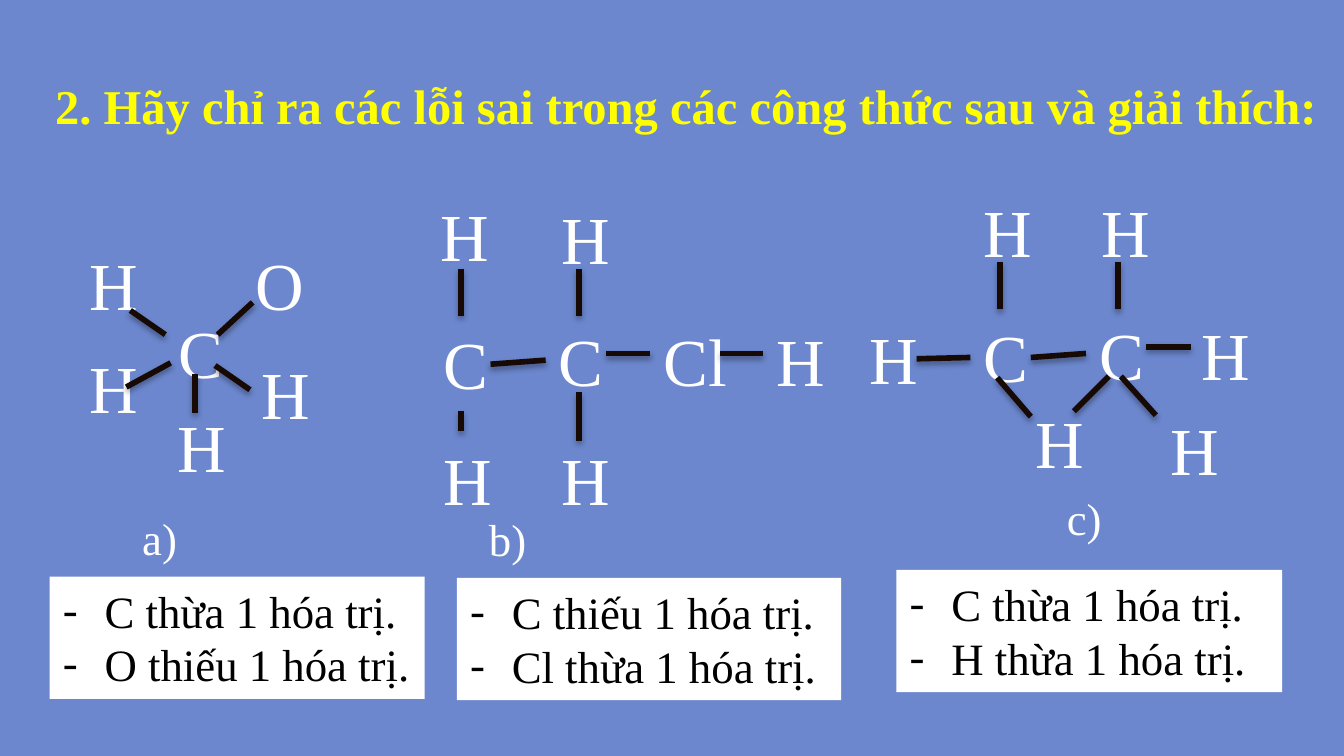
from lxml.etree import SubElement
from pptx import Presentation
from pptx.dml.color import RGBColor
from pptx.enum.shapes import MSO_CONNECTOR, MSO_SHAPE
from pptx.enum.text import MSO_ANCHOR, MSO_AUTO_SIZE, PP_ALIGN
from pptx.oxml.ns import qn
from pptx.util import Inches, Pt

BLUE = RGBColor(0x6C, 0x87, 0xCE)
YELLOW = RGBColor(0xFF, 0xFF, 0x00)
WHITE = RGBColor(0xFF, 0xFF, 0xFF)
BLACK = RGBColor(0x00, 0x00, 0x00)
BOND_COLOR = RGBColor(0x17, 0x0A, 0x05)
FONT = "Times New Roman"

TITLE = "2. Hãy chỉ ra các lỗi sai trong các công thức sau và giải thích:"
ATOM_SIZE = (0.46, 0.71)
CHLORINE_SIZE = (0.76, 0.71)

MOLECULES = [
    {
        "atoms": [("C", 1.23, 2.27), ("H", 1.22, 2.97), ("H", 0.57, 2.53),
                  ("H", 0.57, 1.76), ("O", 1.8, 1.76), ("H", 1.85, 2.57)],
        "bonds": [(0.97, 2.31, 1.23, 2.49), (1.6, 2.72, 1.86, 2.9),
                  (1.62, 2.49, 1.88, 2.25), (0.94, 2.88, 1.27, 2.7),
                  (1.45, 3.07, 1.45, 2.78)],
        "label": ("a)", 0.96, 3.75, 1.27),
        "box": (0.37, 4.29, 2.79),
        "errors": ["C thừa 1 hóa trị.", "O thiếu 1 hóa trị."],
    },
    {
        "atoms": [("C", 3.2, 2.35), ("H", 3.2, 3.21), ("H", 3.18, 1.4),
                  ("C", 4.06, 2.33), ("H", 4.08, 3.21), ("H", 4.08, 1.42),
                  ("Cl", 4.84, 2.33), ("H", 5.68, 2.33)],
        "bonds": [(3.43, 2.35, 3.43, 2), (3.65, 2.71, 4.06, 2.68),
                  (3.43, 3.21, 3.43, 3.06), (4.51, 2.63, 4.84, 2.63),
                  (4.31, 2.35, 4.31, 2), (4.31, 3.28, 4.31, 2.92),
                  (5.36, 2.63, 5.68, 2.63)],
        "label": ("b)", 3.54, 3.76, 1.27),
        "box": (3.4, 4.3, 2.86),
        "errors": ["C thiếu 1 hóa trị.", "Cl thừa 1 hóa trị."],
    },
    {
        "atoms": [("C", 7.22, 2.3), ("H", 7.61, 2.94), ("H", 6.37, 2.31),
                  ("H", 7.22, 1.37), ("C", 8.08, 2.28), ("H", 8.61, 2.99),
                  ("H", 8.1, 1.37), ("H", 8.84, 2.28)],
        "bonds": [(7.44, 2.3, 7.44, 1.95), (7.67, 2.66, 8.08, 2.63),
                  (7.67, 3.1, 7.42, 2.81), (6.82, 2.67, 7.22, 2.66),
                  (8.53, 2.58, 8.86, 2.58), (8.32, 2.3, 8.32, 1.95),
                  (7.99, 3.06, 8.25, 2.8), (8.6, 3.09, 8.34, 2.8)],
        "label": ("c)", 7.84, 3.6, 1.56),
        "box": (6.67, 4.24, 2.87),
        "errors": ["C thừa 1 hóa trị.", "H thừa 1 hóa trị."],
    },
]


def style(paragraph, size, color, bold=False):
    paragraph.alignment = PP_ALIGN.LEFT
    font = paragraph.font
    font.name, font.size, font.bold = FONT, Pt(size), bold
    font.color.rgb = color


def add_title(slide):
    title = slide.shapes.title
    title.left, title.top = Inches(0.31), Inches(0.44)
    title.width, title.height = Inches(9.69), Inches(0.68)
    frame = title.text_frame
    frame.text = TITLE
    frame.word_wrap = True
    frame.auto_size = MSO_AUTO_SIZE.NONE
    frame.vertical_anchor = MSO_ANCHOR.MIDDLE
    frame.margin_left = frame.margin_right = Inches(0.1)
    frame.margin_top = frame.margin_bottom = Inches(0.1)
    style(frame.paragraphs[0], 26, YELLOW, bold=True)


def add_text(slide, text, left, top, width, height, size):
    box = slide.shapes.add_textbox(*map(Inches, (left, top, width, height)))
    frame = box.text_frame
    frame.text = text
    frame.word_wrap = True
    frame.auto_size = MSO_AUTO_SIZE.SHAPE_TO_FIT_TEXT
    style(frame.paragraphs[0], size, WHITE)


def add_bond(slide, *ends):
    bond = slide.shapes.add_connector(MSO_CONNECTOR.STRAIGHT, *map(Inches, ends))
    bond.line.color.rgb = BOND_COLOR
    bond.line.width = Pt(3)
    effects = SubElement(bond._element.spPr, qn("a:effectLst"))
    shadow = SubElement(effects, qn("a:outerShdw"), blurRad=str(Pt(3.1)),
                        dist=str(Pt(1.8)), dir="5400000", rotWithShape="0")
    color = SubElement(shadow, qn("a:srgbClr"), val=str(BLACK))
    SubElement(color, qn("a:alpha"), val="35000")


def add_bullet(paragraph):
    properties = paragraph._p.get_or_add_pPr()
    properties.set("marL", str(Inches(0.31)))
    properties.set("indent", str(-Inches(0.31)))
    color = SubElement(properties, qn("a:buClr"))
    SubElement(color, qn("a:srgbClr"), val=str(BLACK))
    SubElement(properties, qn("a:buFont"), typeface=FONT)
    SubElement(properties, qn("a:buChar"), char="-")


def add_errors(slide, errors, left, top, width):
    box = slide.shapes.add_shape(MSO_SHAPE.RECTANGLE,
                                 *map(Inches, (left, top, width, 0.91)))
    box.shadow.inherit = False
    box.fill.solid()
    box.fill.fore_color.rgb = WHITE
    box.line.fill.background()
    frame = box.text_frame
    frame.text = "\n".join(errors)
    frame.word_wrap = True
    frame.auto_size = MSO_AUTO_SIZE.SHAPE_TO_FIT_TEXT
    frame.vertical_anchor = MSO_ANCHOR.TOP
    for paragraph in frame.paragraphs:
        add_bullet(paragraph)
        style(paragraph, 24, BLACK)


def main():
    presentation = Presentation()
    presentation.slide_width = Inches(10)
    presentation.slide_height = presentation.slide_width * 9 // 16
    slide = presentation.slides.add_slide(presentation.slide_layouts[5])
    slide.background.fill.solid()
    slide.background.fill.fore_color.rgb = BLUE
    add_title(slide)
    for molecule in MOLECULES:
        for symbol, left, top in molecule["atoms"]:
            size = CHLORINE_SIZE if symbol == "Cl" else ATOM_SIZE
            add_text(slide, symbol, left, top, *size, 36)
        for bond in molecule["bonds"]:
            add_bond(slide, *bond)
        add_text(slide, *molecule["label"], 0.5, 24)
        add_errors(slide, molecule["errors"], *molecule["box"])
    presentation.save("out.pptx")


if __name__ == "__main__":
    main()
